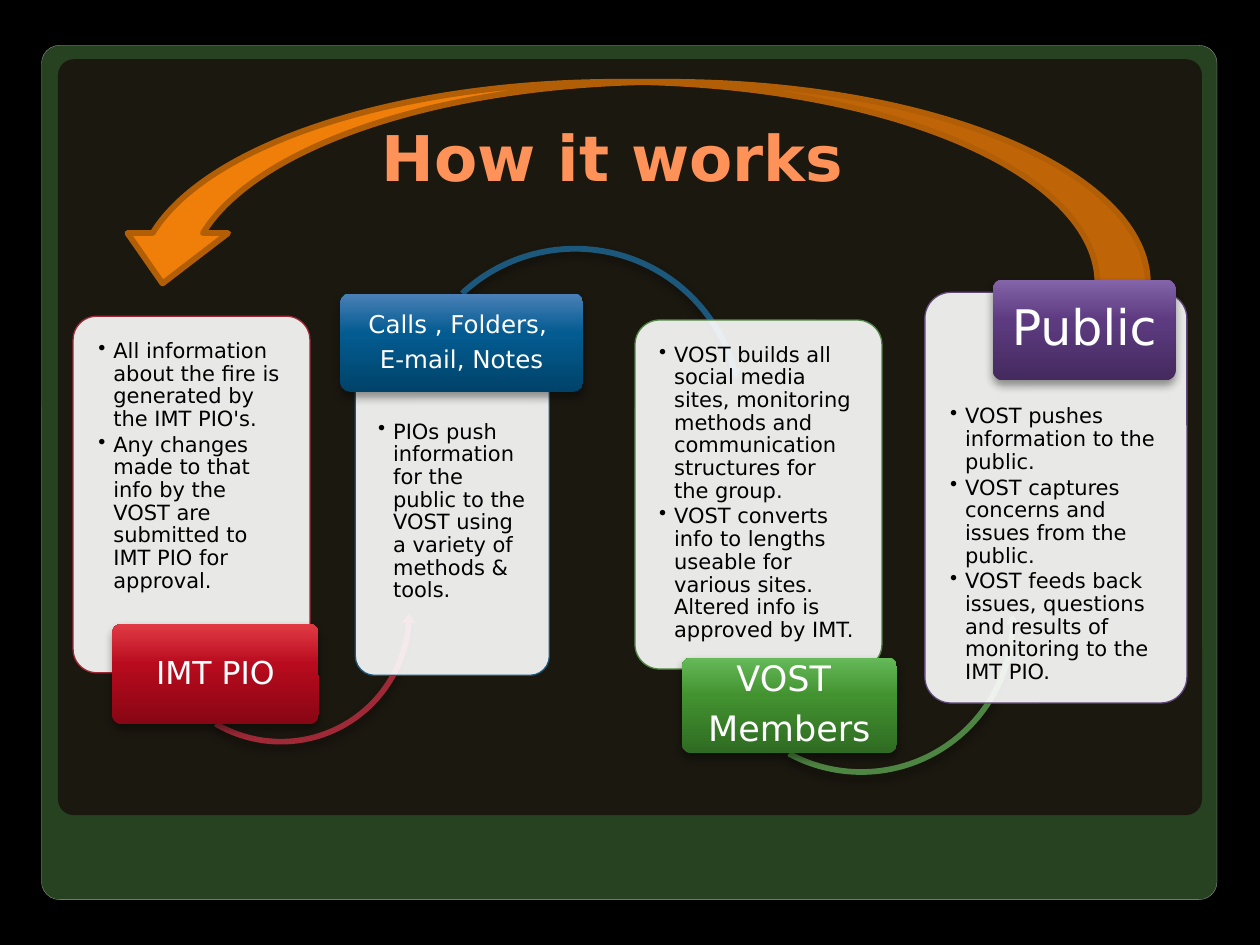
import copy

import pptx
import pptx.dml.color
import pptx.enum.shapes
import pptx.enum.text
import pptx.oxml
import pptx.oxml.ns
import pptx.util

Inches, Pt = pptx.util.Inches, pptx.util.Pt
SHAPE = pptx.enum.shapes.MSO_SHAPE
ALIGN = pptx.enum.text.PP_ALIGN
ANCHOR = pptx.enum.text.MSO_ANCHOR
qn = pptx.oxml.ns.qn
FONT = "DejaVu Sans"

COLORS = {
    "black": "000000", "white": "FFFFFF", "title": "FF9258",
    "frame": "274221", "frame line": "A4A4A4", "panel": "1B1810",
    "orange": "F07F09", "orange line": "B25E07",
    "red": "9F2936", "blue": "1B587C", "green": "4E8542", "purple": "604878",
}
LABEL_GRADIENTS = {
    "red": ("870614", "B80B1E", "E13C45"),
    "blue": ("00436A", "035C91", "4A80B7"),
    "green": ("2F6B22", "429230", "66B959"),
    "purple": ("442A5E", "5E3B81", "8364A8"),
}
GRADIENT_POSITIONS = (0, 0.6, 1)

# Boxes are (left, top, width, height) in inches; arc is (shape, box, adjustments).
STEPS = [
    dict(color="red", card=(0.58, 2.51, 1.88, 2.83), text=(0.64, 2.56, 1.77, 2.11),
         bullets=["All information about the fire is generated by the IMT PIO's.",
                  "Any changes made to that info by the VOST are submitted to IMT PIO for approval."],
         label=(0.89, 4.95, 1.64, 0.8), name=["IMT PIO"], size=18,
         arc=(SHAPE.LEFT_CIRCULAR_ARROW, (1.16, 3.8, 2.14, 2.14),
              (0.021, 2.576, 2.482, 72.396, 0.025))),
    dict(color="blue", card=(2.82, 2.55, 1.54, 2.81), text=(2.86, 3.2, 1.45, 2.12),
         bullets=["PIOs push information for the public to the VOST using a variety of methods & tools."],
         label=(2.7, 2.33, 1.93, 0.78), name=["Calls , Folders, ", "E-mail, Notes"], size=14,
         arc=(SHAPE.CIRCULAR_ARROW, (3.2, 1.92, 2.73, 2.73),
              (0.017, 1.996, 206.577, 136.083, 0.02))),
    dict(color="green", card=(5.04, 2.54, 1.96, 2.77), text=(5.09, 2.59, 1.85, 2.06),
         bullets=["VOST builds all social media sites, monitoring methods and communication "
                  "structures for the group.",
                  "VOST converts info to lengths useable for various sites. "
                  "Altered info is approved by IMT."],
         label=(5.41, 5.22, 1.71, 0.76), name=["VOST ", "Members"], size=20,
         arc=(SHAPE.LEFT_CIRCULAR_ARROW, (5.58, 3.67, 2.51, 2.51),
              (0.018, 2.181, 0.815, 71.123, 0.021))),
    dict(color="purple", card=(7.34, 2.32, 2.08, 3.26), text=(7.4, 3.08, 1.96, 2.44),
         bullets=["VOST pushes information to the public.",
                  "VOST captures concerns and issues from the public.",
                  "VOST feeds back issues, questions and results of monitoring to the IMT PIO."],
         label=(7.88, 2.22, 1.45, 0.8), name=["Public"], size=28, arc=None),
]


def rgb(value):
    return pptx.dml.color.RGBColor.from_string(value)


def add_shape(page, kind, box, fill=None, line=None, line_width=0.75, adjustments=()):
    shape = page.shapes.add_shape(kind, *map(Inches, box))
    shape.shadow.inherit = False
    if fill:
        shape.fill.solid()
        shape.fill.fore_color.rgb = rgb(COLORS[fill])
    if line:
        shape.line.color.rgb = rgb(COLORS[line])
        shape.line.width = Pt(line_width)
    else:
        shape.line.fill.background()
    for index, value in enumerate(adjustments):
        shape.adjustments[index] = value
    return shape


def add_shadow(shape, alpha=40, blur=5.2, distance=3):
    """Give the shape a soft black shadow straight below it."""
    effects = shape._element.spPr.find(qn("a:effectLst"))
    effects.append(pptx.oxml.parse_xml(
        '<a:outerShdw xmlns:a="http://schemas.openxmlformats.org/drawingml/2006/main" '
        f'blurRad="{Pt(blur)}" dist="{Pt(distance)}" dir="5400000" rotWithShape="0">'
        f'<a:srgbClr val="{COLORS["black"]}"><a:alpha val="{alpha * 1000}"/></a:srgbClr>'
        '</a:outerShdw>'))


def set_gradient(shape, stops):
    """Fill the shape from the bottom up with three colour stops."""
    shape.fill.gradient()
    shape.fill.gradient_angle = 90
    stop_list = shape._element.spPr.find(".//" + qn("a:gsLst"))
    stop_list.append(copy.deepcopy(stop_list[-1]))
    for stop, position, color in zip(shape.fill.gradient_stops, GRADIENT_POSITIONS, stops):
        stop.position = position
        stop.color.rgb = rgb(color)


def set_opacity(shape, percent):
    color = shape._element.spPr.find(qn("a:solidFill")).find(qn("a:srgbClr"))
    color.append(color.makeelement(qn("a:alpha"), {"val": str(percent * 1000)}))


def write_text(shape, lines, size, color, bold=False, align=ALIGN.LEFT, anchor=ANCHOR.TOP,
               margins=(0.1, 0.05), line_spacing=None, space_after=0, bullet=False):
    frame = shape.text_frame
    frame.word_wrap = True
    frame.auto_size = pptx.enum.text.MSO_AUTO_SIZE.NONE
    frame.vertical_anchor = anchor
    frame.margin_left = frame.margin_right = Inches(margins[0])
    frame.margin_top = frame.margin_bottom = Inches(margins[1])
    for index, line in enumerate(lines):
        para = frame.add_paragraph() if index else frame.paragraphs[0]
        para.alignment = align
        para.space_after = Pt(space_after)
        if line_spacing:
            para.line_spacing = line_spacing
        if bullet:
            para.level = 1
            properties = para._p.get_or_add_pPr()
            properties.set("marL", str(Inches(0.12)))
            properties.set("indent", str(Inches(-0.12)))
            properties.append(properties.makeelement(qn("a:buChar"), {"char": "•"}))
        span = para.add_run()
        span.text = line
        span.font.name = FONT
        span.font.size = Pt(size)
        span.font.bold = bold
        span.font.color.rgb = rgb(COLORS[color])


def add_step(page, step):
    color = step["color"]
    card = add_shape(page, SHAPE.ROUNDED_RECTANGLE, step["card"], fill="white", line=color,
                     adjustments=(0.1,))
    set_opacity(card, 90)
    box = page.shapes.add_textbox(*map(Inches, step["text"]))
    write_text(box, step["bullets"], 12, "black", margins=(0.14, 0.14),
               line_spacing=0.9, space_after=1.8, bullet=True)
    if step["arc"]:
        kind, arc_box, adjustments = step["arc"]
        add_shadow(add_shape(page, kind, arc_box, fill=color, adjustments=adjustments))
    label = add_shape(page, SHAPE.ROUNDED_RECTANGLE, step["label"], adjustments=(0.1,))
    set_gradient(label, LABEL_GRADIENTS[color])
    add_shadow(label)
    write_text(label, step["name"], step["size"], "white", align=ALIGN.CENTER,
               anchor=ANCHOR.MIDDLE, margins=(0.05, 0.05), line_spacing=0.9,
               space_after=step["size"] * 0.35)


def main():
    deck = pptx.Presentation()
    deck.slide_width, deck.slide_height = Inches(10), Inches(7.5)
    page = deck.slides.add_slide(deck.slide_layouts[5])
    page.background.fill.solid()
    page.background.fill.fore_color.rgb = rgb(COLORS["black"])

    frame = add_shape(page, SHAPE.ROUNDED_RECTANGLE, (0.33, 0.36, 9.33, 6.78), fill="frame",
                      line="frame line", line_width=0.16, adjustments=(0.021,))
    add_shadow(frame, alpha=25, blur=6, distance=4)
    add_shape(page, SHAPE.ROUNDED_RECTANGLE, (0.46, 0.47, 9.08, 6), fill="panel",
              adjustments=(0.021,))
    feedback = add_shape(page, SHAPE.CURVED_DOWN_ARROW, (0.89, 0.65, 8.22, 1.6), fill="orange",
                         line="orange line", line_width=3.35)
    feedback._element.spPr.find(qn("a:xfrm")).set("flipH", "1")

    title = page.shapes.title
    title.left, title.top, title.width, title.height = map(Inches, (2.93, 0.44, 6.55, 1.15))
    write_text(title, ["How it works"], 36, "title", bold=True, anchor=ANCHOR.BOTTOM)
    page.shapes._spTree.append(title._element)  # bring the title above the arrow

    for step in STEPS:
        add_step(page, step)
    deck.save("out.pptx")


if __name__ == "__main__":
    main()
